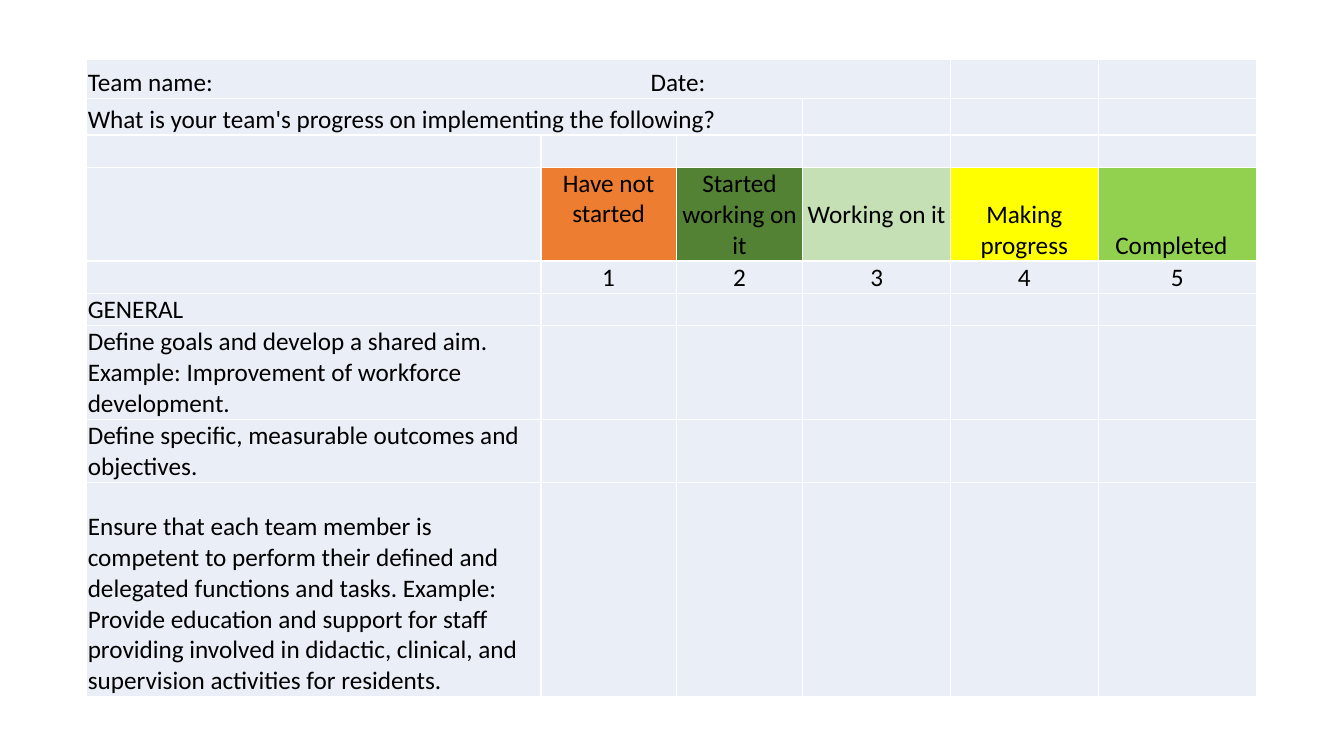
from dataclasses import dataclass

from lxml import etree
from pptx import Presentation
from pptx import util as u
from pptx.dml.color import RGBColor
from pptx.enum import text
from pptx.oxml.ns import qn
from pptx.table import Table, _Cell

COLOURS = {
    "ink": "000000",
    "grid": "FFFFFF",
    "plain": "EAEFF7",
    "orange": "ED7D31",
    "dark green": "548235",
    "pale green": "C5E0B4",
    "yellow": "FFFF00",
    "green": "92D050",
}
COLUMN_WIDTHS = [324.5, 96.5, 90.5, 105.5, 105.5, 113]
ROW_HEIGHTS = [28, 26, 23, 67, 23, 23, 67, 45, 153]
DATE_TAB = 402
RATING_ROW, NUMBER_ROW = 3, 4
TOP = text.MSO_ANCHOR.TOP
MIDDLE = text.MSO_ANCHOR.MIDDLE
BOTTOM = text.MSO_ANCHOR.BOTTOM


@dataclass
class Rating:
    label: str
    colour: str
    anchor: text.MSO_ANCHOR = BOTTOM
    right_inset: float = 0.72


@dataclass
class Statement:
    row: int
    wording: str
    span: int = 1


RATINGS = [
    Rating("Have not started", "orange", TOP),
    Rating("Started working on it", "dark green"),
    Rating("Working on it", "pale green", MIDDLE),
    Rating("Making progress", "yellow"),
    Rating("Completed", "green", right_inset=9),
]
STATEMENTS = [
    Statement(0, "Team name:\tDate:", 4),
    Statement(1, "What is your team's progress on implementing the following?", 3),
    Statement(5, "GENERAL"),
    Statement(6, "Define goals and develop a shared aim. Example: Improvement of "
                 "workforce development."),
    Statement(7, "Define specific, measurable outcomes and objectives."),
    Statement(8, "Ensure that each team member is competent to perform their defined "
                 "and delegated functions and tasks. Example: Provide education and "
                 "support for staff providing involved in didactic, clinical, and "
                 "supervision activities for residents."),
]


def fill_cell(cell: _Cell, colour: str) -> None:
    cell.fill.solid()
    cell.fill.fore_color.rgb = RGBColor.from_string(COLOURS[colour])


def draw_borders(cell: _Cell) -> None:
    properties = cell._tc.get_or_add_tcPr()
    for side in ("a:lnL", "a:lnR", "a:lnT", "a:lnB"):
        line = etree.SubElement(properties, qn(side), w=str(u.Pt(1)))
        line_fill = etree.SubElement(line, qn("a:solidFill"))
        etree.SubElement(line_fill, qn("a:srgbClr"), val=COLOURS["grid"])


def prepare_cell(cell: _Cell) -> None:
    """Give a cell its white borders, plain fill and tight insets."""
    draw_borders(cell)
    fill_cell(cell, "plain")
    cell.margin_left = cell.margin_right = cell.margin_top = u.Pt(0.72)
    cell.margin_bottom = 0
    cell.vertical_anchor = BOTTOM


def write_cell(cell: _Cell, wording: str, centred: bool = False) -> None:
    paragraph = cell.text_frame.paragraphs[0]
    paragraph.text = wording
    paragraph.alignment = text.PP_ALIGN.CENTER if centred else text.PP_ALIGN.LEFT
    if "\t" in wording:
        tabs = etree.SubElement(paragraph._p.get_or_add_pPr(), qn("a:tabLst"))
        etree.SubElement(tabs, qn("a:tab"), pos=str(u.Pt(DATE_TAB)), algn="l")
    paragraph.font.name = "Calibri"
    paragraph.font.size = u.Pt(18)
    paragraph.font.color.rgb = RGBColor.from_string(COLOURS["ink"])


def write_ratings(checklist: Table) -> None:
    for number, rating in enumerate(RATINGS, start=1):
        heading = checklist.cell(RATING_ROW, number)
        fill_cell(heading, rating.colour)
        heading.vertical_anchor = rating.anchor
        heading.margin_right = u.Pt(rating.right_inset)
        write_cell(heading, rating.label, centred=True)
        write_cell(checklist.cell(NUMBER_ROW, number), str(number), centred=True)


def write_statements(checklist: Table) -> None:
    for statement in STATEMENTS:
        cell = checklist.cell(statement.row, 0)
        if statement.span > 1:
            cell.merge(checklist.cell(statement.row, statement.span - 1))
        write_cell(cell, statement.wording)


def main() -> None:
    presentation = Presentation()
    presentation.slide_width, presentation.slide_height = u.Pt(960), u.Pt(540)
    slide = presentation.slides.add_slide(presentation.slide_layouts[6])
    checklist = slide.shapes.add_table(
        len(ROW_HEIGHTS), len(COLUMN_WIDTHS), u.Pt(62), u.Pt(42.5),
        u.Pt(sum(COLUMN_WIDTHS)), u.Pt(sum(ROW_HEIGHTS))).table
    checklist.first_row = checklist.horz_banding = False
    for column, width in zip(checklist.columns, COLUMN_WIDTHS):
        column.width = u.Pt(width)
    for row, height in zip(checklist.rows, ROW_HEIGHTS):
        row.height = u.Pt(height)
    for cell in checklist.iter_cells():
        prepare_cell(cell)
    write_ratings(checklist)
    write_statements(checklist)
    presentation.save("out.pptx")


if __name__ == "__main__":
    main()
